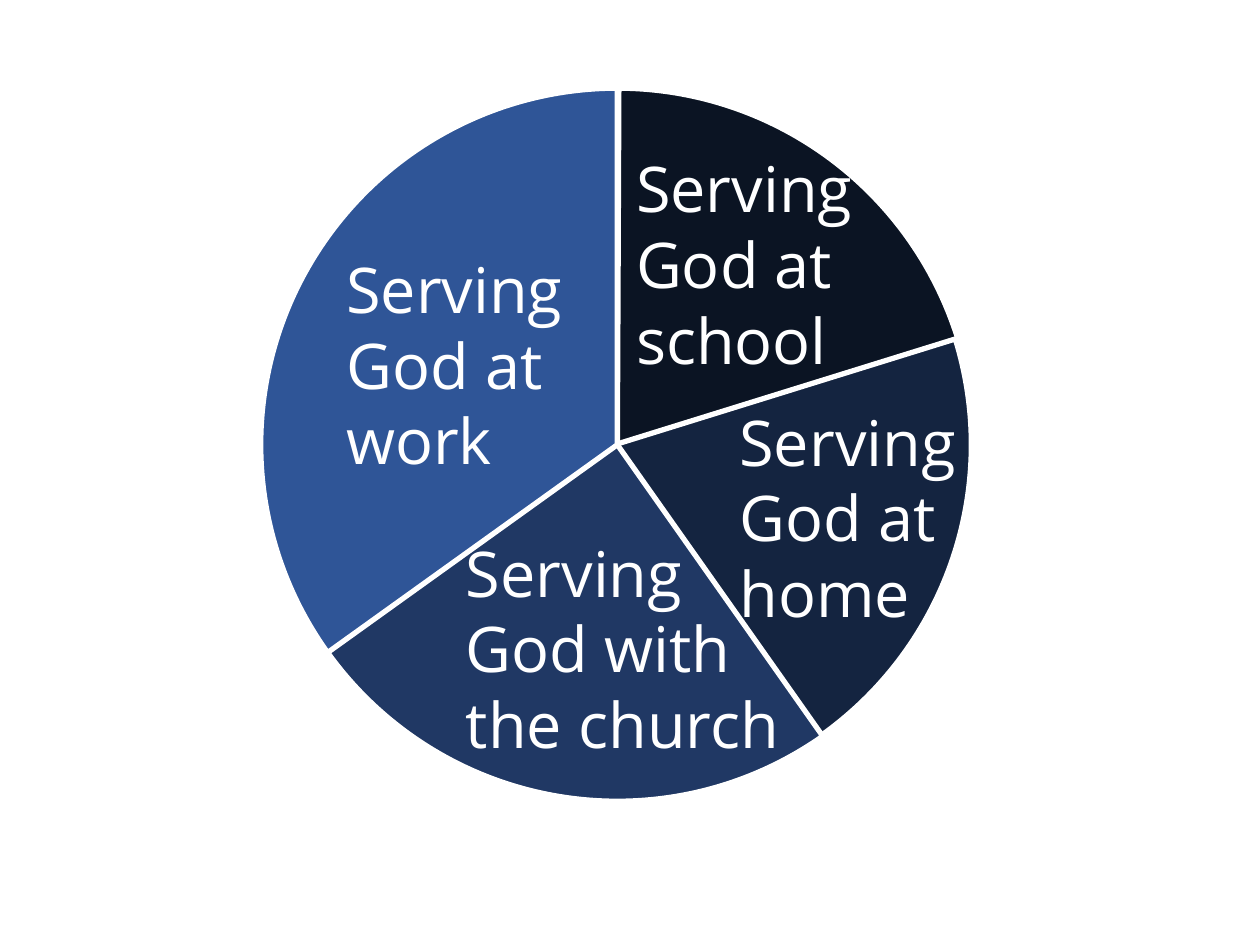
from pptx import Presentation
from pptx.dml.color import RGBColor
from pptx.enum.shapes import MSO_SHAPE
from pptx.enum.text import MSO_AUTO_SIZE
from pptx.util import Inches, Pt

COLORS = {
    "school": "0B1423",
    "home": "142440",
    "church": "203864",
    "work": "2F5597",
    "white": "FFFFFF",
}

# Every slice runs clockwise from its start angle to the top of the circle,
# so each later slice covers the end of the one before.
# (colour name, left, start angle in degrees)
SLICES = [
    ("school", 2.07, 270.25),
    ("home", 2.05, 342.75),
    ("church", 2.07, 54.83),
    ("work", 2.07, 144.34),
]
TOP, DIAMETER = 0.7, 5.66
END_ANGLE = 270
ADJUSTMENT_PER_DEGREE = 0.6

# (text, left, top, width)
LABELS = [
    ("Serving God at home", 5.77, 3.15, 2.12),
    ("Serving God at work", 2.65, 1.94, 2.7),
    ("Serving God at school", 4.95, 1.14, 2.48),
    ("Serving God with the church", 3.6, 4.19, 2.7),
]
LABEL_HEIGHT = 1.92


def color(name):
    return RGBColor.from_string(COLORS[name])


def add_slice(page, name, left, start_angle):
    pie = page.shapes.add_shape(
        MSO_SHAPE.PIE, Inches(left), Inches(TOP), Inches(DIAMETER), Inches(DIAMETER)
    )
    pie.adjustments[0] = start_angle * ADJUSTMENT_PER_DEGREE
    pie.adjustments[1] = END_ANGLE * ADJUSTMENT_PER_DEGREE
    pie.shadow.inherit = False
    pie.fill.solid()
    pie.fill.fore_color.rgb = color(name)
    pie.line.color.rgb = color("white")
    pie.line.width = Pt(3)


def add_label(page, text, left, top, width):
    box = page.shapes.add_textbox(
        Inches(left), Inches(top), Inches(width), Inches(LABEL_HEIGHT)
    )
    frame = box.text_frame
    frame.word_wrap = True
    frame.auto_size = MSO_AUTO_SIZE.SHAPE_TO_FIT_TEXT
    frame.text = text
    font = frame.paragraphs[0].runs[0].font
    font.name = "Open Sans"
    font.size = Pt(36)
    font.color.rgb = color("white")


def main():
    deck = Presentation()
    deck.slide_width, deck.slide_height = Inches(10), Inches(7.5)
    page = deck.slides.add_slide(deck.slide_layouts[6])

    # Circle of slices
    for pie_slice in SLICES:
        add_slice(page, *pie_slice)

    # Labels on the slices
    for label in LABELS:
        add_label(page, *label)

    deck.save("out.pptx")


if __name__ == "__main__":
    main()
